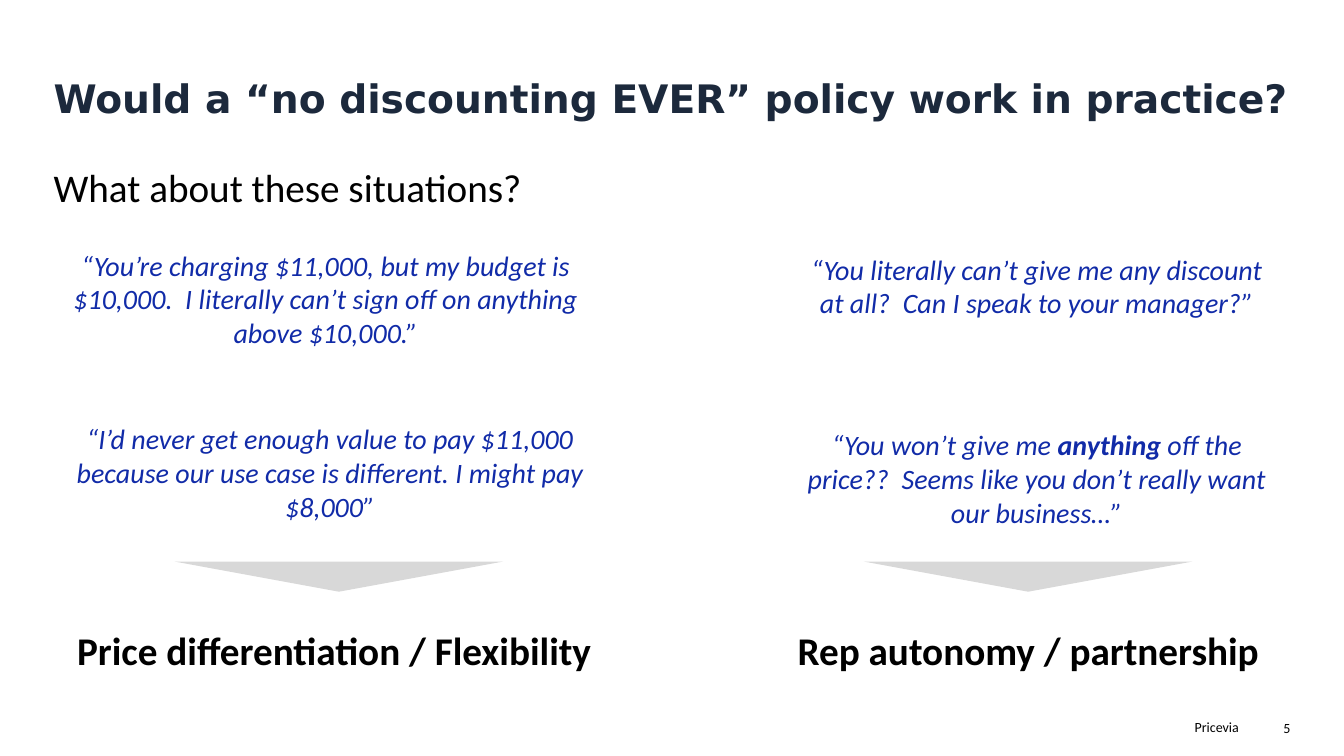
"""Build a slide that questions a strict no-discounting policy."""
import pptx
import pptx.dml.color
import pptx.enum.shapes
import pptx.enum.text
import pptx.util

Cm = pptx.util.Cm
Pt = pptx.util.Pt
RGBColor = pptx.dml.color.RGBColor
ALIGN = pptx.enum.text.PP_ALIGN
ANCHOR = pptx.enum.text.MSO_ANCHOR

BLACK = RGBColor(0x00, 0x00, 0x00)
NAVY = RGBColor(0x1C, 0x29, 0x3C)
BLUE = RGBColor(0x11, 0x2B, 0xA8)
GREY = RGBColor(0xD8, 0xD8, 0xD8)

presentation = pptx.Presentation()
presentation.slide_width = Cm(33.87)
presentation.slide_height = Cm(19.05)
slide = presentation.slides.add_slide(presentation.slide_layouts[6])


def add_text(text, left, top, width, height, size, color=BLACK, align=ALIGN.LEFT,
             bold=False, italic=False, font="Calibri"):
    """Add a text box; parts between asterisks switch boldness."""
    shape = slide.shapes.add_textbox(Cm(left), Cm(top), Cm(width), Cm(height))
    frame = shape.text_frame
    frame.word_wrap = True
    frame.margin_left = frame.margin_right = 0
    frame.margin_top = frame.margin_bottom = Cm(0.13)
    paragraph = frame.paragraphs[0]
    paragraph.alignment = align
    for index, part in enumerate(text.split("*")):
        run = paragraph.add_run()
        run.text = part
        run.font.name = font
        run.font.size = Pt(size)
        run.font.color.rgb = color
        run.font.bold = bold != (index % 2 == 1)
        run.font.italic = italic
    return shape


title = add_text("Would a “no discounting EVER” policy work in practice?",
                 1.35, 1.3, 31.17, 1.9, 28, NAVY, bold=True, font="DejaVu Sans")
title.text_frame.vertical_anchor = ANCHOR.BOTTOM
title.text_frame.paragraphs[0].line_spacing = 0.9

add_text("What about these situations?", 1.35, 3.99, 27.5, 1.45, 28)

quotes = [
    ("“You’re charging $11,000, but my budget is $10,000.  I literally can’t sign off "
     "on anything above $10,000.”", 1.57, 6.12, 13.28, 2.82),
    ("“I’d never get enough value to pay $11,000 because our use case is different. "
     "I might pay $8,000”", 1.68, 10.5, 13.28, 2.82),
    ("“You literally can’t give me any discount at all?  Can I speak to your manager?”",
     20.35, 6.23, 11.56, 1.96),
    ("“You won’t give me *anything* off the price??  Seems like you don’t really want "
     "our business…”", 20.35, 10.65, 11.56, 2.82),
]
for quote, left, top, width, height in quotes:
    add_text(quote, left, top, width, height, 20, BLUE, ALIGN.CENTER, italic=True)

conclusions = [
    ("Price differentiation / Flexibility", 1.88, 13.08, 4.4),
    ("Rep autonomy / partnership", 19.71, 12.4, 21.77),
]
for conclusion, left, width, arrow_left in conclusions:
    add_text(conclusion, left, 15.65, width, 1.45, 28, align=ALIGN.CENTER, bold=True)
    arrow = slide.shapes.add_shape(pptx.enum.shapes.MSO_SHAPE.ISOSCELES_TRIANGLE,
                                   Cm(arrow_left), Cm(14.15), Cm(8.28), Cm(0.76))
    arrow.rotation = 180
    arrow.shadow.inherit = False
    arrow.fill.solid()
    arrow.fill.fore_color.rgb = GREY
    arrow.line.fill.background()

add_text("Pricevia", 23.4, 17.98, 7.82, 0.69, 10, align=ALIGN.RIGHT)
add_text("5", 30.1, 18.01, 2.42, 0.69, 10, align=ALIGN.RIGHT)

presentation.save("out.pptx")
